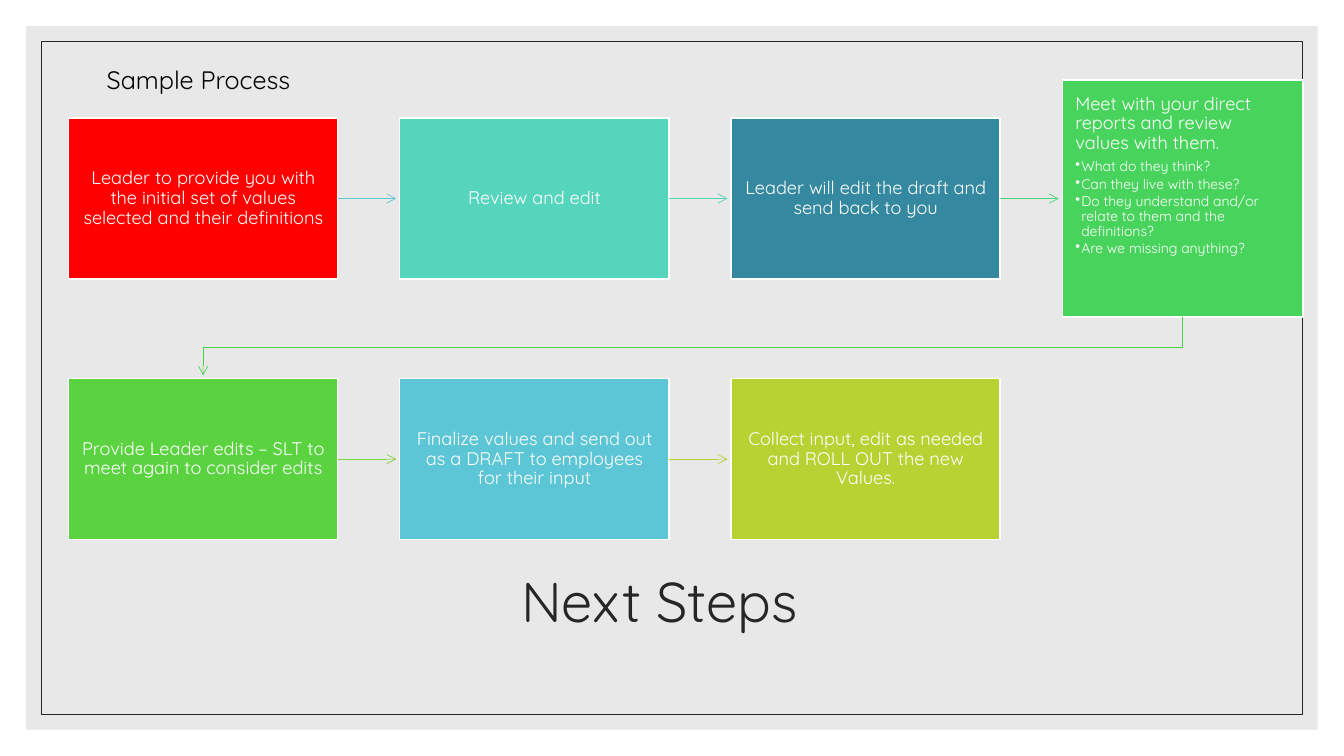
from lxml.etree import SubElement
from pptx import Presentation
from pptx.dml.color import RGBColor
from pptx.enum.shapes import MSO_CONNECTOR as Connector, MSO_SHAPE as Shape
from pptx.enum.text import MSO_ANCHOR as Anchor, PP_ALIGN as Align
from pptx.oxml.ns import qn
from pptx.util import Inches, Pt

WIDTH, HEIGHT = 13.33, 7.5
FONT = "Quicksand"
WHITE, BLACK, DARK, GRAY = "FFFFFF", "000000", "262626", "D9D9D9"

TITLE = "Next Steps"
SUBTITLE = "Sample Process"
STEPS = [
    ("Leader to provide you with the initial set of values selected and their definitions", "FF0000", "5CC6D6"),
    ("Review and edit", "55D5BC", "54D5B3"),
    ("Leader will edit the draft and send back to you", "3488A0", "4CD47B"),
    ("Meet with your direct reports and review values with them.", "48D45C", "4BD344"),
    ("Provide Leader edits – SLT to meet again to consider edits", "5BD341", "7ED33B"),
    ("Finalize values and send out as a DRAFT to employees for their input", "5CC6D6", "B8D233"),
    ("Collect input, edit as needed and ROLL OUT the new Values.", "B8D233", None),
]
QUESTIONS = [
    "What do they think?",
    "Can they live with these?",
    "Do they understand and/or relate to them and the definitions?",
    "Are we missing anything?",
]
COLUMNS, LEFT, TOP = 4, 0.68, 1.17
PITCH_X, PITCH_Y = 3.285, 2.585
STEP_SIZE = (2.67, 1.6)
REVIEW_STEP, REVIEW_SIZE = 3, (2.39, 2.35)
ARROW_LENGTH, ARROW_GAP = 0.58, 0.03
PADDING = (0.13, 0.14)


def color(value):
    """Turn a hex string into a colour."""
    return RGBColor.from_string(value)


def add_rect(page, left, top, width, height, fill=None, line=None, weight=1, alpha=None):
    """Add a rectangle without a shadow."""
    box = page.shapes.add_shape(Shape.RECTANGLE, *map(Inches, (left, top, width, height)))
    box.shadow.inherit = False
    if fill:
        box.fill.solid()
        box.fill.fore_color.rgb = color(fill)
    else:
        box.fill.background()
    if alpha:
        tint = box.element.spPr.find(".//" + qn("a:srgbClr"))
        SubElement(tint, qn("a:alpha"), val=str(alpha * 1000))
    if line:
        box.line.color.rgb = color(line)
        box.line.width = Pt(weight)
    else:
        box.line.fill.background()
    return box


def write(frame, text, size=13, ink=WHITE, align=Align.CENTER, spacing=0.9, after=0, bullet=None, first=True):
    """Write one paragraph into a text frame."""
    para = frame.paragraphs[0] if first else frame.add_paragraph()
    para.alignment = align
    para.line_spacing = spacing
    para.space_after = Pt(after)
    span = para.add_run()
    span.text = text
    span.font.size = Pt(size)
    span.font.name = FONT
    span.font.color.rgb = color(ink)
    if bullet:
        para.level = 1
        properties = para._p.get_or_add_pPr()
        properties.set("marL", str(Inches(0.06)))
        properties.set("indent", str(Inches(-0.06)))
        SubElement(properties, qn("a:buChar"), char=bullet)


def add_label(page, left, top, width, height, text, anchor=Anchor.TOP, **style):
    """Add a wrapped text box holding one paragraph."""
    frame = page.shapes.add_textbox(*map(Inches, (left, top, width, height))).text_frame
    frame.word_wrap = True
    frame.vertical_anchor = anchor
    write(frame, text, **style)


def style_arrow(arrow, ink):
    """Give a line its colour, width and arrowhead."""
    arrow.line.color.rgb = color(ink)
    arrow.line.width = Pt(0.5)
    SubElement(arrow.element.spPr.find(qn("a:ln")), qn("a:tailEnd"), type="arrow")


def add_step(page, index, text, fill):
    """Add one step of the process at its grid cell."""
    row, column = divmod(index, COLUMNS)
    review = index == REVIEW_STEP
    width, height = REVIEW_SIZE if review else STEP_SIZE
    middle = TOP + row * PITCH_Y + STEP_SIZE[1] / 2
    box = add_rect(page, LEFT + column * PITCH_X, middle - height / 2, width, height, fill, WHITE)
    frame = box.text_frame
    frame.word_wrap = True
    frame.margin_left = frame.margin_right = Inches(PADDING[0])
    frame.margin_top = frame.margin_bottom = Inches(PADDING[1])
    frame.vertical_anchor = Anchor.TOP if review else Anchor.MIDDLE
    write(frame, text, align=Align.LEFT if review else Align.CENTER, after=4.55)
    for question in QUESTIONS if review else []:
        write(frame, question, size=10, align=Align.LEFT, after=1.5, bullet="•", first=False)
    return box


def add_arrow(page, box, ink):
    """Draw an arrow from a step towards the next one in its row."""
    start, middle = box.left + box.width, box.top + box.height // 2
    arrow = page.shapes.add_connector(Connector.STRAIGHT, start, middle, start + Inches(ARROW_LENGTH), middle)
    arrow.begin_connect(box, 3)
    style_arrow(arrow, ink)
    SubElement(arrow.element.spPr, qn("a:effectLst"))


def add_return(page, box, target, ink):
    """Draw the bent arrow from the end of a row to the next row."""
    start_x, start_y = box.left + box.width // 2, box.top + box.height
    end_x, end_y = target.left + target.width // 2, target.top - Inches(ARROW_GAP)
    bend = (start_y + target.top) // 2
    builder = page.shapes.build_freeform(start_x, start_y, scale=1.0)
    builder.add_line_segments([(start_x, bend), (end_x, bend), (end_x, end_y)], close=False)
    arrow = builder.convert_to_shape()
    arrow.shadow.inherit = False
    arrow.fill.background()
    style_arrow(arrow, ink)


def main():
    """Build the slide."""
    deck = Presentation()
    deck.slide_width, deck.slide_height = Inches(WIDTH), Inches(HEIGHT)
    page = deck.slides.add_slide(deck.slide_layouts[6])
    for inset, look in ((0.26, {"fill": GRAY, "alpha": 60}), (0.41, {"line": DARK, "weight": 0.5})):
        add_rect(page, inset, inset, WIDTH - 2 * inset, HEIGHT - 2 * inset, **look)
    add_label(page, 1.04, 5.25, 11, 1.5, TITLE, Anchor.MIDDLE, size=40, ink=DARK)
    boxes = [add_step(page, index, text, fill) for index, (text, fill, _) in enumerate(STEPS)]
    for index, (_, _, ink) in enumerate(STEPS[:-1]):
        if index == REVIEW_STEP:
            add_return(page, boxes[index], boxes[index + 1], ink)
        else:
            add_arrow(page, boxes[index], ink)
    add_label(page, 0.96, 0.59, 4.07, 0.4, SUBTITLE, size=18, ink=BLACK, align=Align.LEFT, spacing=1.0)
    deck.save("out.pptx")


if __name__ == "__main__":
    main()
